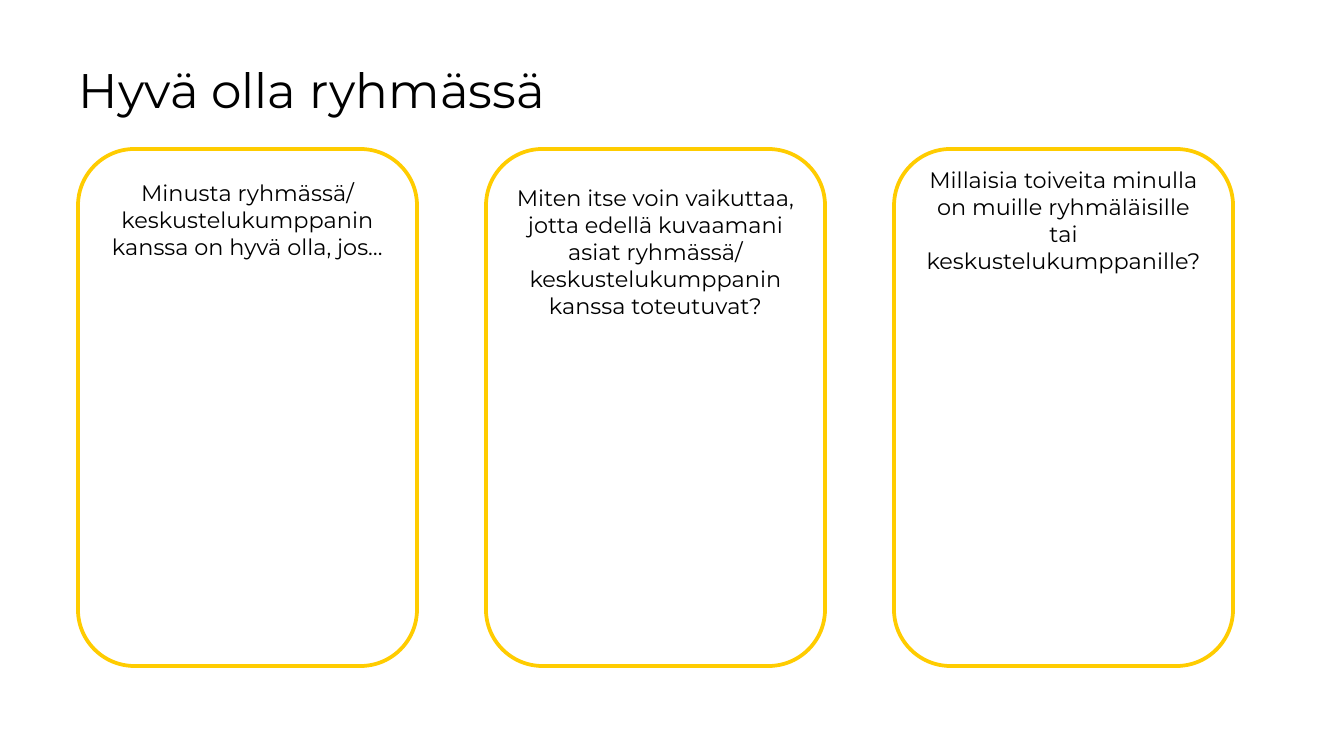
"""Builds a slide with a title and three rounded discussion cards."""
from pptx import Presentation, util as u
from pptx.dml.color import RGBColor
from pptx.enum import shapes, text

PX = 914400 / 134.4


def px(n):
    return u.Emu(round(n * PX))


def style(p, size):
    p.font.name = "Montserrat"
    p.font.size = u.Pt(size)
    p.font.color.rgb = RGBColor.from_string("000000")


prs = Presentation()
prs.slide_width, prs.slide_height = px(1344), px(756)
s = prs.slides.add_slide(prs.slide_layouts[6])

title = s.shapes.add_textbox(px(66), px(38), px(1052), px(103))
tf = title.text_frame
tf.word_wrap = True
tf.vertical_anchor = text.MSO_ANCHOR.MIDDLE
tf.margin_left = tf.margin_right = tf.margin_top = tf.margin_bottom = px(13)
tf.text = "Hyvä olla ryhmässä"
style(tf.paragraphs[0], 26)

cards = [
    ("Minusta ryhmässä/ keskustelukumppanin kanssa on hyvä olla, jos…", 14),
    ("Miten itse voin vaikuttaa, jotta edellä kuvaamani asiat ryhmässä/ "
     "keskustelukumppanin kanssa toteutuvat?", 19),
    ("Millaisia toiveita minulla on muille ryhmäläisille tai "
     "keskustelukumppanille?", 1),
]
for i, (prompt, top) in enumerate(cards):
    sp = s.shapes.add_shape(shapes.MSO_SHAPE.ROUNDED_RECTANGLE,
                            px(78 + 408 * i), px(149), px(339), px(517))
    sp.shadow.inherit = False
    sp.fill.solid()
    sp.fill.fore_color.rgb = RGBColor.from_string("FFFFFF")
    sp.line.color.rgb = RGBColor.from_string("FFCC00")
    sp.line.width = u.Pt(2)
    tf = sp.text_frame
    tf.word_wrap = True
    tf.vertical_anchor = text.MSO_ANCHOR.TOP
    tf.margin_left = tf.margin_right = px(13)
    tf.margin_top = px(top)
    tf.text = prompt
    p = tf.paragraphs[0]
    p.alignment = text.PP_ALIGN.CENTER
    style(p, 12)

prs.save("out.pptx")
